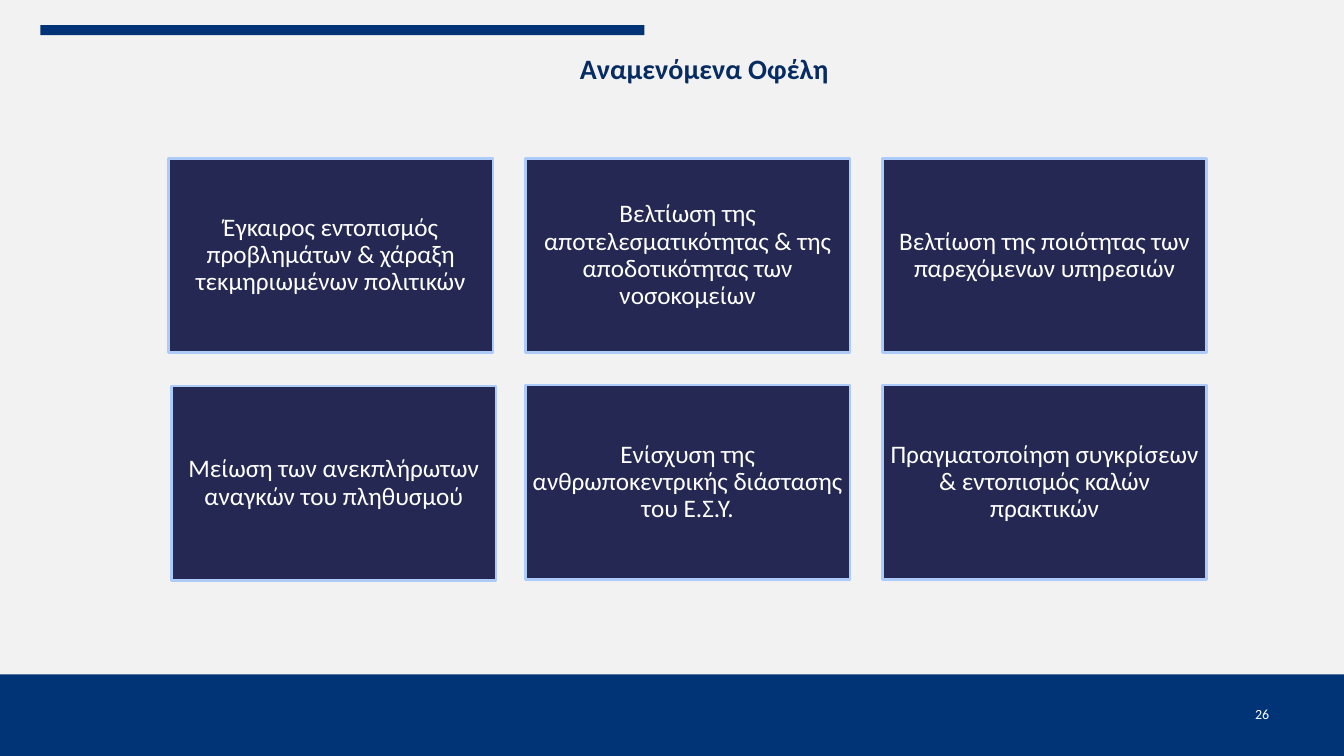
from pptx import Presentation
from pptx import util as u
from pptx.dml.color import RGBColor
from pptx.enum import shapes, text

TITLE = "Αναμενόμενα Οφέλη"
PAGE_NUMBER = "26"
BENEFITS = [
    ["Έγκαιρος εντοπισμός προβλημάτων & χάραξη τεκμηριωμένων πολιτικών",
     "Βελτίωση της αποτελεσματικότητας & της αποδοτικότητας των νοσοκομείων",
     "Βελτίωση της ποιότητας των παρεχόμενων υπηρεσιών"],
    ["Μείωση των ανεκπλήρωτων αναγκών του πληθυσμού",
     "Ενίσχυση της ανθρωποκεντρικής διάστασης του Ε.Σ.Υ.",
     "Πραγματοποίηση συγκρίσεων & εντοπισμός καλών πρακτικών"],
]
NUDGES = {(1, 0): (0.03, 0.01)}  # (row, column): shift right, shift down

FONT = "Calibri"
PAPER = RGBColor(0xF2, 0xF2, 0xF2)
BAND = RGBColor(0x01, 0x34, 0x76)
TITLE_INK = RGBColor(0x07, 0x2C, 0x62)
CARD = RGBColor(0x24, 0x28, 0x52)
CARD_EDGE = RGBColor(0xAC, 0xCB, 0xF9)
WHITE = RGBColor(0xFF, 0xFF, 0xFF)

SLIDE_W, SLIDE_H = 13.33, 7.5
FOOTER_TOP = 6.69
GRID_LEFT, GRID_TOP = 1.67, 1.57
CARD_W, CARD_H = 3.22, 1.93
GAP = 0.32


def add_rect(slide, box, fill, edge=None):
    rect = slide.shapes.add_shape(
        shapes.MSO_SHAPE.RECTANGLE, *map(u.Inches, box))
    rect.shadow.inherit = False
    rect.fill.solid()
    rect.fill.fore_color.rgb = fill
    if edge is None:
        rect.line.fill.background()
    else:
        rect.line.color.rgb = edge
        rect.line.width = u.Pt(2)
    return rect


def write(shape, wording, size, color, insets, align=text.PP_ALIGN.CENTER,
          anchor=text.MSO_ANCHOR.MIDDLE, spacing=0.9, bold=False):
    """Fill a shape with one paragraph; insets are left, top, right, bottom."""
    frame = shape.text_frame
    frame.word_wrap = True
    frame.vertical_anchor = anchor
    (frame.margin_left, frame.margin_top,
     frame.margin_right, frame.margin_bottom) = map(u.Inches, insets)
    paragraph = frame.paragraphs[0]
    paragraph.alignment = align
    paragraph.line_spacing = spacing
    run = paragraph.add_run()
    run.text = wording
    run.font.name = FONT
    run.font.size = u.Pt(size)
    run.font.bold = bold
    run.font.color.rgb = color


def main():
    deck = Presentation()
    deck.slide_width, deck.slide_height = u.Inches(SLIDE_W), u.Inches(SLIDE_H)
    slide = deck.slides.add_slide(deck.slide_layouts[6])
    slide.background.fill.solid()
    slide.background.fill.fore_color.rgb = PAPER

    add_rect(slide, (0, FOOTER_TOP, SLIDE_W, SLIDE_H - FOOTER_TOP), BAND)
    add_rect(slide, (0.4, 0.25, 5.99, 0.1), BAND)

    title = slide.shapes.add_textbox(*map(u.Inches, (0.69, 0.5, 12.57, 0.77)))
    write(title, TITLE, 20, TITLE_INK, (0.12, 0.05, 0.1, 0.05),
          anchor=text.MSO_ANCHOR.TOP, bold=True)

    number = slide.shapes.add_textbox(*map(u.Inches, (12.35, 6.8, 0.57, 0.57)))
    write(number, PAGE_NUMBER, 10, WHITE, [0.1] * 4,
          align=text.PP_ALIGN.LEFT, spacing=1.0)

    for row, benefits in enumerate(BENEFITS):
        for column, benefit in enumerate(benefits):
            right, down = NUDGES.get((row, column), (0, 0))
            left = GRID_LEFT + column * (CARD_W + GAP) + right
            top = GRID_TOP + row * (CARD_H + GAP) + down
            card = add_rect(slide, (left, top, CARD_W, CARD_H), CARD, CARD_EDGE)
            write(card, benefit, 18, WHITE, [0.07] * 4)

    deck.save("out.pptx")


if __name__ == "__main__":
    main()
